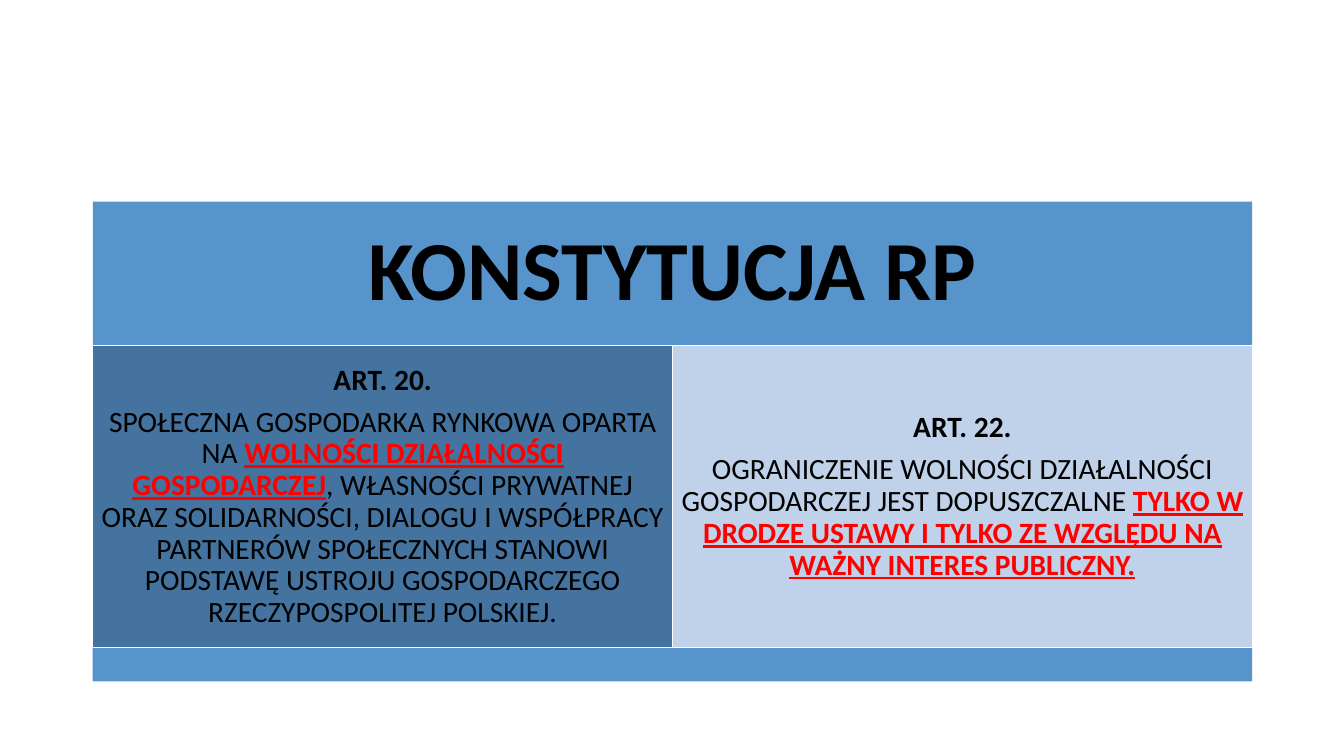
"""Builds a slide on two articles of the Polish constitution."""
from pptx import Presentation
from pptx.dml.color import RGBColor
from pptx.enum.shapes import MSO_SHAPE
from pptx.enum.text import MSO_ANCHOR, MSO_AUTO_SIZE, PP_ALIGN
from pptx.util import Pt

PX = 9144
BLUE = RGBColor(0x57, 0x94, 0xCB)
DARK = RGBColor(0x43, 0x73, 0x9E)
PALE = RGBColor(0xC0, 0xD2, 0xEA)
WHITE = RGBColor(0xFF, 0xFF, 0xFF)
BLACK = RGBColor(0x00, 0x00, 0x00)
RED = RGBColor(0xFF, 0x00, 0x00)

PLAIN = {"bold": False, "underline": False}
HEAD = {"bold": True, "underline": False}
KEY = {"bold": True, "underline": True}

LEFT, TOP, WIDTH = 92, 200, 1150
HEAD_H, BODY_H, FOOT_H = 143, 300, 33
HALF = WIDTH // 2
BODY_Y = TOP + HEAD_H

ARTS = [
    (DARK, [
        [("ART. 20.", HEAD)],
        [("SPOŁECZNA GOSPODARKA RYNKOWA OPARTA NA ", PLAIN),
         ("WOLNOŚCI DZIAŁALNOŚCI GOSPODARCZEJ", KEY),
         (", WŁASNOŚCI PRYWATNEJ ORAZ SOLIDARNOŚCI, DIALOGU I WSPÓŁPRACY "
          "PARTNERÓW SPOŁECZNYCH STANOWI PODSTAWĘ USTROJU GOSPODARCZEGO "
          "RZECZYPOSPOLITEJ POLSKIEJ.", PLAIN)],
    ]),
    (PALE, [
        [("ART. 22.", HEAD)],
        [("OGRANICZENIE WOLNOŚCI DZIAŁALNOŚCI GOSPODARCZEJ JEST DOPUSZCZALNE ",
          PLAIN),
         ("TYLKO W DRODZE USTAWY I TYLKO ZE WZGLĘDU NA WAŻNY INTERES "
          "PUBLICZNY.", KEY)],
    ]),
]


def block(x, y, w, h, fill):
    """Adds a plain filled rectangle."""
    box = slide.shapes.add_shape(
        MSO_SHAPE.RECTANGLE, x * PX, y * PX, w * PX, h * PX)
    box.shadow.inherit = False
    box.fill.solid()
    box.fill.fore_color.rgb = fill
    box.line.fill.background()
    return box


def write(box, paras, size, inset):
    """Fills a box with centred paragraphs of styled runs."""
    frame = box.text_frame
    form = {"word_wrap": True, "auto_size": MSO_AUTO_SIZE.NONE,
            "vertical_anchor": MSO_ANCHOR.MIDDLE}
    for side in ("left", "top", "right", "bottom"):
        form[f"margin_{side}"] = inset * PX
    for name, value in form.items():
        setattr(frame, name, value)
    for i, parts in enumerate(paras):
        para = frame.add_paragraph() if i else frame.paragraphs[0]
        look = {"alignment": PP_ALIGN.CENTER, "line_spacing": 0.9,
                "space_before": Pt(0), "space_after": Pt(size * 0.35)}
        for name, value in look.items():
            setattr(para, name, value)
        for text, style in parts:
            run = para.add_run()
            run.text = text
            font = {"name": "Calibri", "size": Pt(size), **style}
            for name, value in font.items():
                setattr(run.font, name, value)
            run.font.color.rgb = RED if style is KEY else BLACK


deck = Presentation()
deck.slide_width, deck.slide_height = 1333 * PX, 750 * PX
slide = deck.slides.add_slide(deck.slide_layouts[5])

title = slide.shapes.title
place = {"left": LEFT, "top": TOP, "width": WIDTH, "height": HEAD_H}
for name, value in place.items():
    setattr(title, name, value * PX)
title.fill.solid()
title.fill.fore_color.rgb = BLUE
write(title, [[("KONSTYTUCJA RP", HEAD)]], 60, 25)

for i, (fill, paras) in enumerate(ARTS):
    card = block(LEFT + i * HALF, BODY_Y, HALF, BODY_H, fill)
    card.line.color.rgb = WHITE
    card.line.width = Pt(1)
    write(card, paras, 21, 8)

block(LEFT, BODY_Y + BODY_H, WIDTH, FOOT_H, BLUE)

deck.save("out.pptx")
